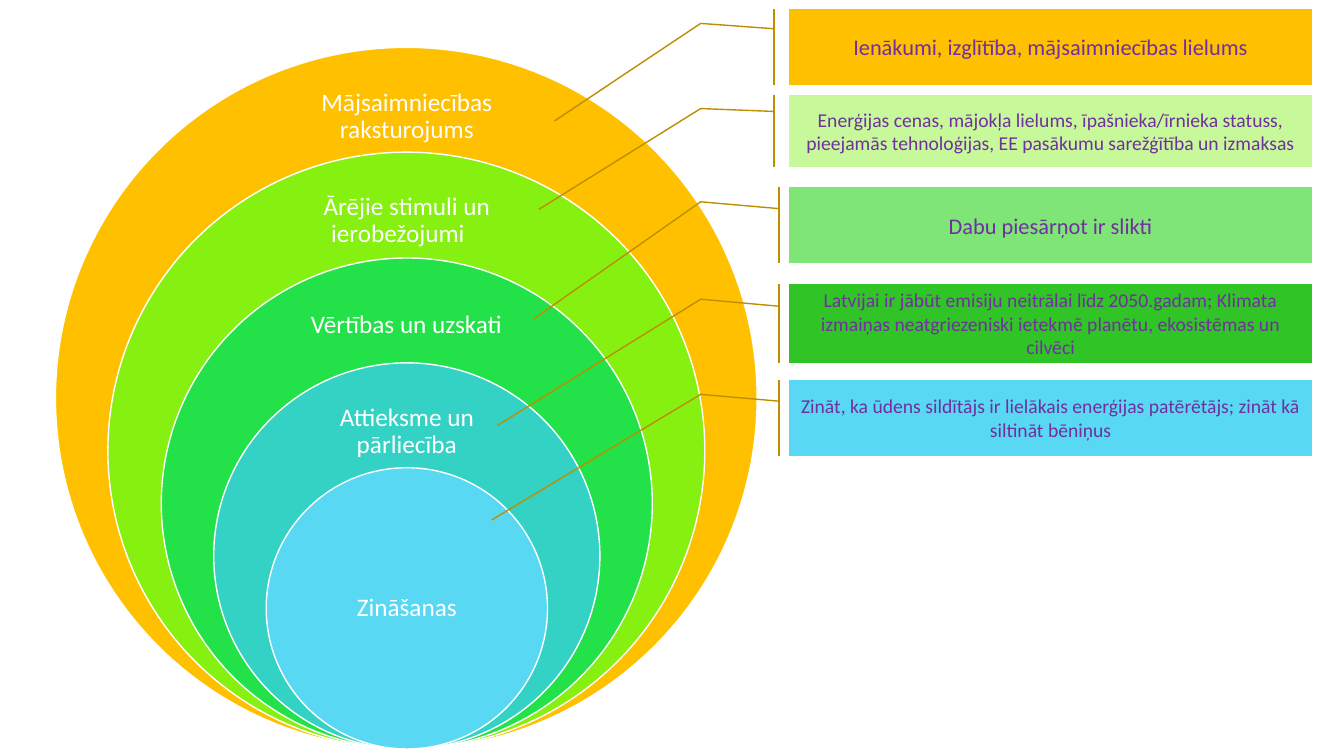
from dataclasses import dataclass

import pptx
import pptx.dml.color
import pptx.enum.shapes
import pptx.enum.text
import pptx.util

EMU_PER_PX = 9144
COLORS = {
    "white": "FFFFFF",
    "amber": "FFC000",
    "lime": "86F011",
    "green": "23E148",
    "teal": "33D2C5",
    "sky": "58D8F2",
    "pale_lime": "C7F89A",
    "soft_green": "7FE577",
    "deep_green": "31C426",
    "leader": "BD8E00",
    "purple": "7030A0",
}

CENTER_X = 403
CIRCLES_BOTTOM = 743
OUTER_DIAMETER = 696
DIAMETER_STEP = 104.3
CALLOUT_LEFT = 783
CALLOUT_WIDTH = 518


@dataclass(frozen=True)
class Layer:
    text: str
    color: str
    label_top: int
    label_width: int
    label_height: int


@dataclass(frozen=True)
class Callout:
    text: str
    color: str
    top: int
    height: int
    size: int
    bar: tuple[float, float]
    tip: tuple[float, float]


LAYERS = [
    Layer("Mājsaimniecības raksturojums", "amber", 81, 261, 70),
    Layer("Ārējie stimuli un ierobežojumi\t", "lime", 185, 255, 68),
    Layer("Vērtības un uzskati", "green", 289, 252, 67),
    Layer("Attieksme un pārliecība", "teal", 394, 207, 69),
    Layer("Zināšanas", "sky", 534, 197, 139),
]

CALLOUTS = [
    Callout("Ienākumi, izglītība, mājsaimniecības lielums",
            "amber", 9, 75, 16, (0.26, -0.03), (1.48, -0.45)),
    Callout("Enerģijas cenas, mājokļa lielums, īpašnieka/īrnieka statuss, "
            "pieejamās tehnoloģijas, EE pasākumu sarežģītība un izmaksas",
            "pale_lime", 94, 72, 14, (0.23, -0.03), (1.58, -0.48)),
    Callout("Dabu piesārņot ir slikti",
            "soft_green", 186, 75, 16, (0.28, -0.02), (1.74, -0.49)),
    Callout("Latvijai ir jābūt emisiju neitrālai līdz 2050.gadam; Klimata "
            "izmaiņas neatgriezeniski ietekmē planētu, ekosistēmas un cilvēci",
            "deep_green", 282, 78, 14, (0.28, -0.02), (1.8, -0.56)),
    Callout("Zināt, ka ūdens sildītājs ir lielākais enerģijas patērētājs; "
            "zināt kā siltināt bēniņus",
            "sky", 377, 75, 14, (0.28, -0.02), (1.85, -0.57)),
]


def px(value: int) -> pptx.util.Emu:
    return pptx.util.Emu(value * EMU_PER_PX)


def rgb(name: str) -> pptx.dml.color.RGBColor:
    return pptx.dml.color.RGBColor.from_string(COLORS[name])


def write_text(shape, text: str, *, size: int, color: str,
               inset: int | None = None, line_spacing: float = 1.0) -> None:
    frame = shape.text_frame
    frame.word_wrap = True
    frame.vertical_anchor = pptx.enum.text.MSO_ANCHOR.MIDDLE
    if inset is not None:
        frame.margin_left = frame.margin_right = px(inset)
        frame.margin_top = frame.margin_bottom = px(inset)
    paragraph = frame.paragraphs[0]
    paragraph.alignment = pptx.enum.text.PP_ALIGN.CENTER
    paragraph.line_spacing = line_spacing
    run = paragraph.add_run()
    run.text = text
    run.font.name = "Calibri"
    run.font.size = pptx.util.Pt(size)
    run.font.color.rgb = rgb(color)


def add_filled_shape(slide, kind, left: int, top: int, width: int, height: int,
                     fill: str, line: str):
    shape = slide.shapes.add_shape(kind, px(left), px(top), px(width), px(height))
    shape.shadow.inherit = False
    shape.fill.solid()
    shape.fill.fore_color.rgb = rgb(fill)
    shape.line.color.rgb = rgb(line)
    shape.line.width = pptx.util.Pt(1)
    return shape


def add_layer(slide, layer: Layer, index: int) -> None:
    diameter = round(OUTER_DIAMETER - index * DIAMETER_STEP)
    add_filled_shape(slide, pptx.enum.shapes.MSO_SHAPE.OVAL,
                     CENTER_X - diameter // 2, CIRCLES_BOTTOM - diameter,
                     diameter, diameter, layer.color, "white")
    label = slide.shapes.add_textbox(
        px(CENTER_X - layer.label_width // 2), px(layer.label_top),
        px(layer.label_width), px(layer.label_height))
    write_text(label, layer.text, size=18, color="white", inset=14, line_spacing=0.9)


def add_callout(slide, callout: Callout) -> None:
    shape = add_filled_shape(
        slide, pptx.enum.shapes.MSO_SHAPE.LINE_CALLOUT_2_ACCENT_BAR,
        CALLOUT_LEFT, callout.top, CALLOUT_WIDTH, callout.height,
        callout.color, "leader")
    elbow = (0.19, -0.17)
    for index, value in enumerate(callout.bar + elbow + callout.tip):
        shape.adjustments[index] = value
    write_text(shape, callout.text, size=callout.size, color="purple")


def main() -> None:
    presentation = pptx.Presentation()
    presentation.slide_width = px(1333)
    presentation.slide_height = px(750)
    slide = presentation.slides.add_slide(presentation.slide_layouts[6])
    for index, layer in enumerate(LAYERS):
        add_layer(slide, layer, index)
    for callout in CALLOUTS:
        add_callout(slide, callout)
    presentation.save("out.pptx")


if __name__ == "__main__":
    main()
